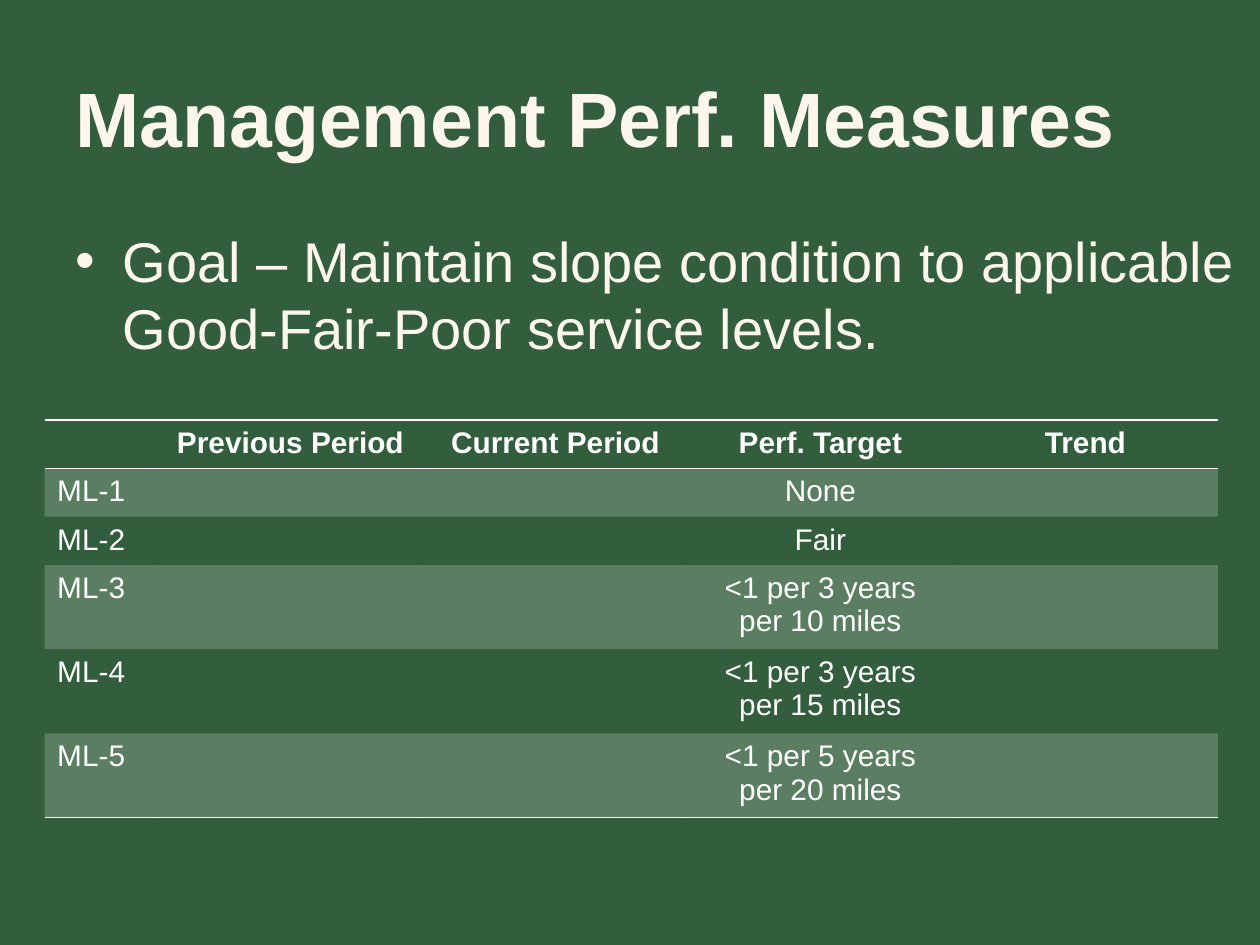
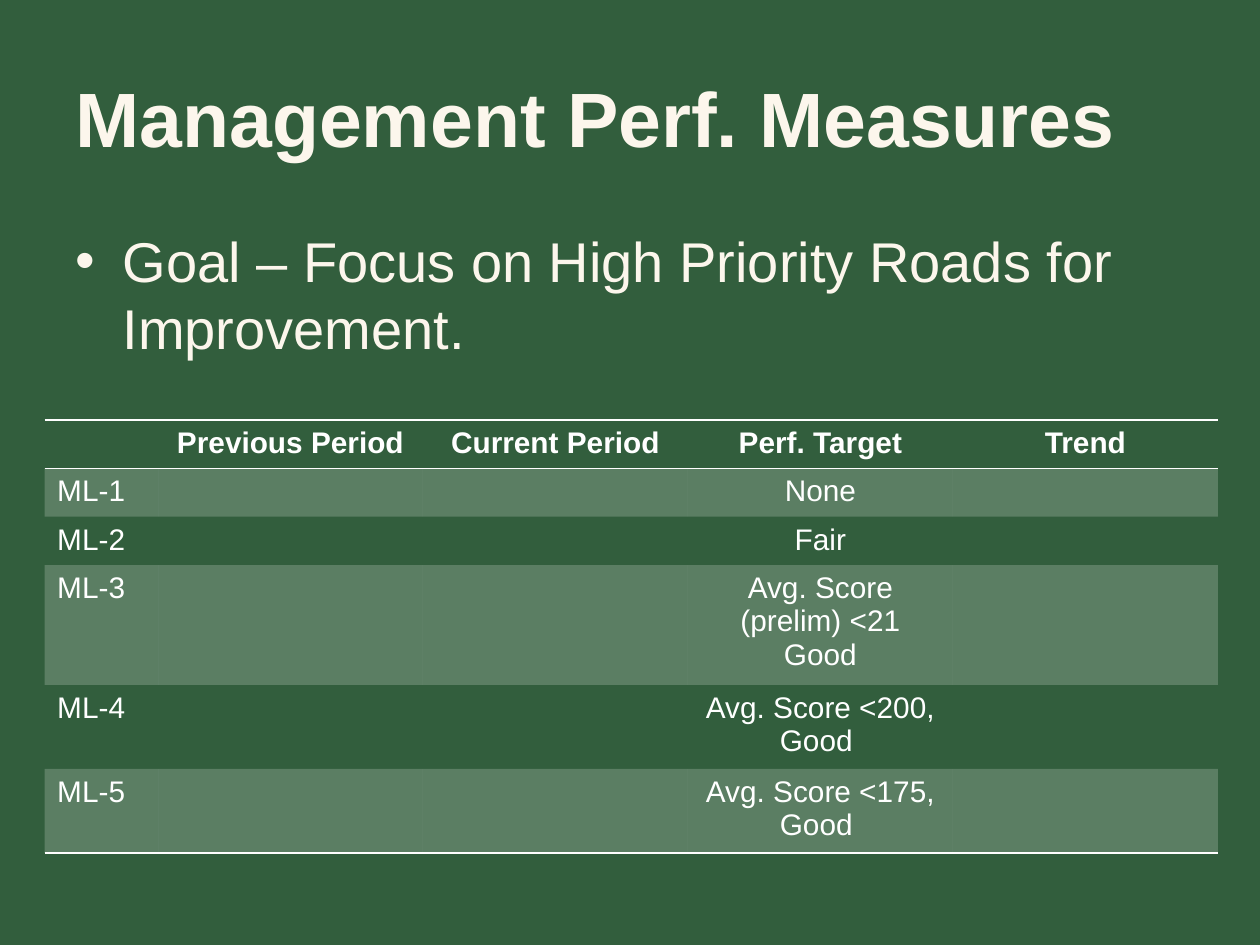
"""Build two performance-measure slides, each with a goal and a target table."""
from dataclasses import dataclass

from lxml.etree import SubElement
from pptx import Presentation
from pptx.dml.color import RGBColor as RGB
from pptx.enum.text import MSO_ANCHOR as ANCHOR, PP_ALIGN as ALIGN
from pptx.oxml.ns import qn
from pptx.util import Pt

TITLE = "Management Perf. Measures"
HEADINGS = ("", "Previous Period", "Current Period", "Perf. Target", "Trend")
MEASURES = (
    {
        "goal": "Goal – Maintain slope condition to applicable Good-Fair-Poor service levels.",
        "goal_width": 678,
        "targets": ("None", "Fair", "<1 per 3 years per 10 miles",
                    "<1 per 3 years per 15 miles", "<1 per 5 years per 20 miles"),
    },
    {
        "goal": "Goal – Focus on High Priority Roads for Improvement.",
        "goal_width": 648,
        "targets": ("None", "Fair", "Avg. Score (prelim) <21 Good",
                    "Avg. Score <200, Good ", "Avg. Score <175, Good "),
    },
)


@dataclass(frozen=True)
class Theme:
    font: str = "Arial"
    ground: str = "325E3D"
    cream: str = "FCF6EC"
    white: str = "FFFFFF"
    band_alpha: int = 20
    title_size: int = 44
    goal_size: int = 32
    table_size: int = 17
    rule: int = 1


THEME = Theme()
PAGE = (720, 540)
LEFT, TITLE_TOP, TITLE_WIDTH, TITLE_HEIGHT = 36, 21.6, 648, 90
GOAL_TOP, GOAL_HEIGHT, GOAL_INDENT = 126, 356.4, 27
TABLE_LEFT, TABLE_TOP = 25.5, 240
COLUMNS = (64.8,) + (151.4,) * 4
ROWS = (27.4, 27.4, 27.4, 29.4, 28.1, 29.4)
NO_STYLE = "{2D5ABB26-0587-4C30-8999-92F81FD0307C}"
TITLE_FORMAT = {"size": Pt(THEME.title_size), "bold": True}
GOAL_FORMAT = {"size": Pt(THEME.goal_size), "bold": False}


def write(paragraph, wording, color, formats):
    run = paragraph.add_run()
    run.text = wording
    for key, value in {"name": THEME.font, **formats}.items():
        setattr(run.font, key, value)
    run.font.color.rgb = RGB.from_string(color)


def add_text(slide, box, wording, formats, anchor):
    frame = slide.shapes.add_textbox(*map(Pt, box)).text_frame
    frame.word_wrap = True
    frame.vertical_anchor = anchor
    paragraph = frame.paragraphs[0]
    write(paragraph, wording, THEME.cream, formats)
    return paragraph


def add_goal(slide, goal, width):
    paragraph = add_text(slide, (LEFT, GOAL_TOP, width, GOAL_HEIGHT), goal,
                         GOAL_FORMAT, ANCHOR.TOP)
    paragraph.space_before = Pt(THEME.goal_size * 0.2)
    layout = paragraph._p.get_or_add_pPr()
    layout.set("marL", str(Pt(GOAL_INDENT)))
    layout.set("indent", str(-Pt(GOAL_INDENT)))
    SubElement(layout, qn("a:buFont"), typeface=THEME.font)
    SubElement(layout, qn("a:buChar"), char="•")


def add_rule(cell, side):
    line = SubElement(cell._tc.get_or_add_tcPr(), qn(f"a:{side}"), w=str(Pt(THEME.rule)))
    paint = SubElement(line, qn("a:solidFill"))
    SubElement(paint, qn("a:srgbClr"), val=THEME.white)


def shade(cell, banded):
    if not banded:
        cell.fill.background()
        return
    cell.fill.solid()
    cell.fill.fore_color.rgb = RGB.from_string(THEME.white)
    tint = cell._tc.tcPr.find(f".//{qn('a:solidFill')}[last()]/{qn('a:srgbClr')}")
    for tint in cell._tc.tcPr.findall(f"{qn('a:solidFill')}/{qn('a:srgbClr')}"):
        SubElement(tint, qn("a:alpha"), val=str(THEME.band_alpha * 1000))


def fill_cell(cell, wording, row, column):
    paragraph = cell.text_frame.paragraphs[0]
    if column:
        paragraph.alignment = ALIGN.CENTER
    if wording:
        write(paragraph, wording, THEME.white,
              {"size": Pt(THEME.table_size), "bold": row == 0})
    else:
        SubElement(paragraph._p, qn("a:endParaRPr"), sz=str(THEME.table_size * 100))
    if row == 0:
        add_rule(cell, "lnT")
    if row in (0, len(ROWS) - 1):
        add_rule(cell, "lnB")
    shade(cell, row % 2 == 1)


def add_targets(slide, targets):
    body = [(f"ML-{level}", "", "", target, "") for level, target in enumerate(targets, 1)]
    box = (TABLE_LEFT, TABLE_TOP, sum(COLUMNS), sum(ROWS))
    table = slide.shapes.add_table(len(ROWS), len(COLUMNS), *map(Pt, box)).table
    table.first_row = table.horz_banding = False
    table._tbl.tblPr.find(qn("a:tableStyleId")).text = NO_STYLE
    for column, width in zip(table.columns, COLUMNS):
        column.width = Pt(width)
    for row, height in zip(table.rows, ROWS):
        row.height = Pt(height)
    for row, wordings in enumerate([HEADINGS, *body]):
        for column, wording in enumerate(wordings):
            fill_cell(table.cell(row, column), wording, row, column)


def main():
    deck = Presentation()
    deck.slide_width, deck.slide_height = map(Pt, PAGE)
    for measure in MEASURES:
        slide = deck.slides.add_slide(deck.slide_layouts[6])
        slide.background.fill.solid()
        slide.background.fill.fore_color.rgb = RGB.from_string(THEME.ground)
        add_text(slide, (LEFT, TITLE_TOP, TITLE_WIDTH, TITLE_HEIGHT), TITLE,
                 TITLE_FORMAT, ANCHOR.MIDDLE)
        add_goal(slide, measure["goal"], measure["goal_width"])
        add_targets(slide, measure["targets"])
    deck.save("out.pptx")


if __name__ == "__main__":
    main()
